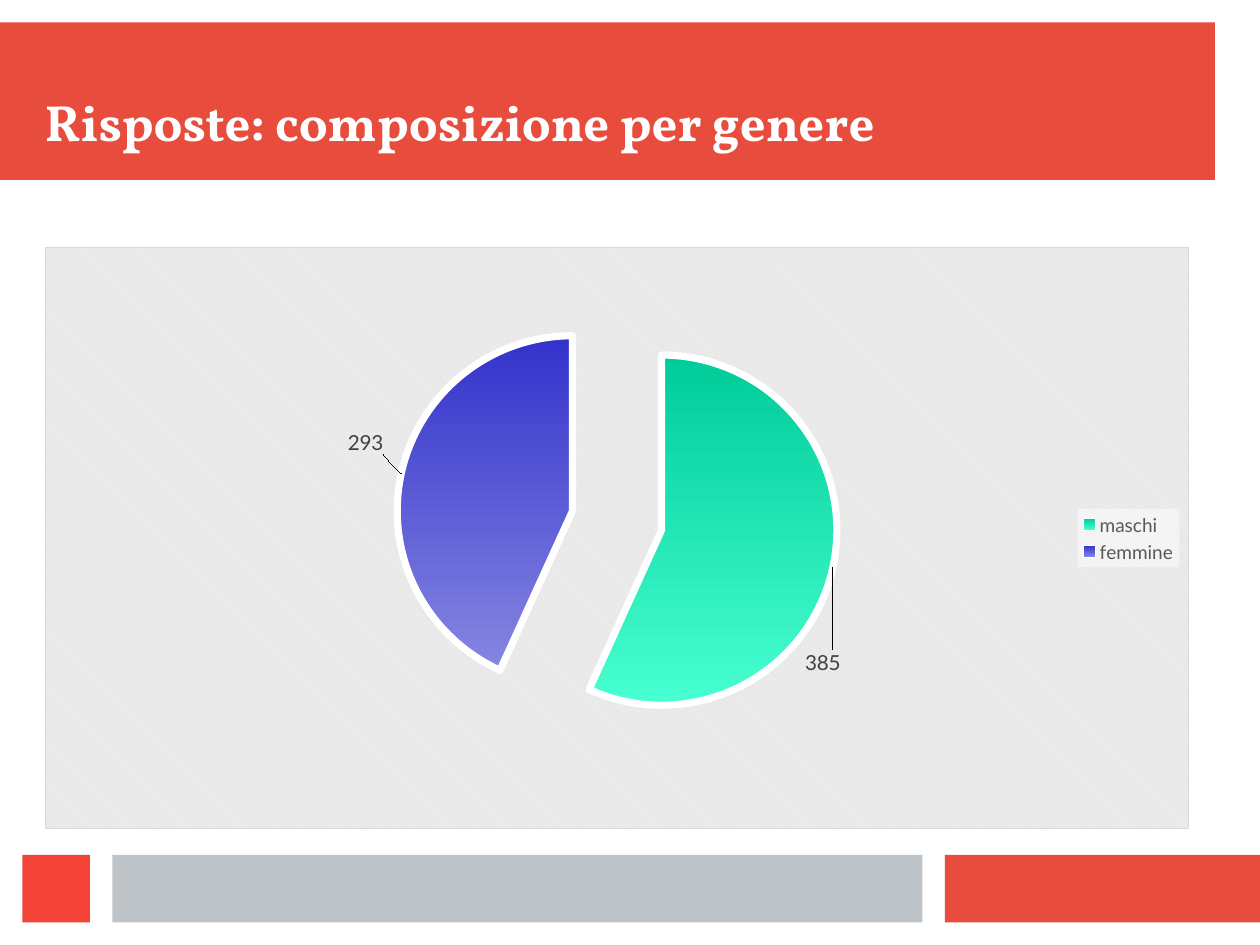
from pptx import Presentation
from pptx.chart.data import CategoryChartData
from pptx.dml.color import RGBColor
from pptx.enum.chart import XL_CHART_TYPE, XL_LABEL_POSITION, XL_LEGEND_POSITION
from pptx.enum.shapes import MSO_SHAPE
from pptx.enum.text import MSO_ANCHOR
from pptx.oxml import parse_xml
from pptx.oxml.ns import nsdecls, qn
from pptx.util import Cm, Pt

RED = RGBColor(0xE7, 0x4C, 0x3C)
BRIGHT_RED = RGBColor(0xF4, 0x43, 0x36)
SILVER = RGBColor(0xBD, 0xC3, 0xC7)
WHITE = RGBColor(0xFF, 0xFF, 0xFF)
LABEL_GREY = RGBColor(0x40, 0x40, 0x40)
LEGEND_GREY = RGBColor(0x59, 0x59, 0x59)
PATTERN_GREY = RGBColor(0xE6, 0xE6, 0xE6)
BORDER_GREY = RGBColor(0xD9, 0xD9, 0xD9)
GREENS = RGBColor(0x00, 0xCC, 0x99), RGBColor(0x47, 0xFF, 0xD1)
BLUES = RGBColor(0x33, 0x33, 0xCC), RGBColor(0x85, 0x85, 0xE0)


def chart_xml(tag, content="", attrs=""):
    """Return a chart element with the given content."""
    return parse_xml(f'<c:{tag} {nsdecls("c", "a")} {attrs}>{content}</c:{tag}>')


def layout(**values):
    """Return a manual layout element."""
    items = "".join(f'<c:{k} val="{v}"/>' for k, v in values.items())
    return chart_xml("layout", f"<c:manualLayout>{items}</c:manualLayout>")


def add_band(s, left, top, width, height, color):
    """Add a plain coloured rectangle."""
    sp = s.shapes.add_shape(MSO_SHAPE.RECTANGLE, Cm(left), Cm(top), Cm(width), Cm(height))
    sp.shadow.inherit = False
    sp.fill.solid()
    sp.fill.fore_color.rgb = color
    sp.line.fill.background()


def add_title(s, text):
    """Add the slide title, anchored at the bottom of its box."""
    tf = s.shapes.add_textbox(Cm(1), Cm(1), Cm(25.9), Cm(2.4)).text_frame
    tf.word_wrap = True
    tf.vertical_anchor = MSO_ANCHOR.BOTTOM
    tf.margin_left = tf.margin_right = tf.margin_top = tf.margin_bottom = 0
    p = tf.paragraphs[0]
    p.text = text
    p.line_spacing = 0.97
    p.font.name, p.font.size, p.font.bold = "Vollkorn", Pt(32), True
    p.font.color.rgb = WHITE


def style_slice(series, index, colors, offset):
    """Give a slice its gradient, white outline and shifted label."""
    point = series.points[index]
    fill = point.format.fill
    fill.gradient()
    fill.gradient_angle = 270
    for stop, position, color in zip(fill.gradient_stops, (0, 1), colors):
        stop.position = position
        stop.color.rgb = color
    point.format.line.color.rgb = WHITE
    point.format.line.width = Pt(4.5)
    label = point.data_label
    label.font.size = Pt(13)
    label.font.color.rgb = LABEL_GREY
    label.position = XL_LABEL_POSITION.OUTSIDE_END
    x, y = offset
    idx = series.data_labels._element.findall(qn("c:dLbl"))[index].find(qn("c:idx"))
    idx.addnext(layout(x=x, y=y))


def style_legend(chart):
    """Place the legend at the right on a translucent white ground."""
    chart.has_legend = True
    legend = chart.legend
    legend.position = XL_LEGEND_POSITION.RIGHT
    legend.include_in_layout = False
    legend.font.size = Pt(12)
    legend.font.color.rgb = LEGEND_GREY
    ground = ('<a:solidFill><a:srgbClr val="FFFFFF"><a:alpha val="50000"/>'
              '</a:srgbClr></a:solidFill>')
    legend._element.find(qn("c:overlay")).addnext(chart_xml("spPr", ground))


def add_pie(s):
    """Add the exploded pie of answers by gender."""
    data = CategoryChartData()
    data.categories = ["maschi", "femmine"]
    data.add_series("Series 1", (385, 293))
    chart = s.shapes.add_chart(XL_CHART_TYPE.PIE, Cm(1), Cm(5.49), Cm(25.43), Cm(12.93), data).chart
    chart.has_title = False
    chart.font.name, chart.font.size = "Lato", Pt(10)
    series = chart.plots[0].series[0]
    series._element.find(qn("c:tx")).addnext(chart_xml("explosion", attrs='val="26"'))
    style_slice(series, 0, GREENS, (-0.03, 0.14))
    style_slice(series, 1, BLUES, (-0.01, -0.03))
    style_legend(chart)
    root = chart.element.find(qn("c:chart"))
    area = root.find(qn("c:plotArea"))
    for old in area.findall(qn("c:layout")):
        area.remove(old)
    area.insert(0, layout(layoutTarget="inner", xMode="edge", yMode="edge",
                          x=0.08, y=0.09, w=0.84, h=0.76))
    root.addnext(chart_xml("spPr", (
        f'<a:pattFill prst="dkDnDiag"><a:fgClr><a:srgbClr val="{WHITE}"/></a:fgClr>'
        f'<a:bgClr><a:srgbClr val="{PATTERN_GREY}"/></a:bgClr></a:pattFill>'
        f'<a:ln w="9525"><a:solidFill><a:srgbClr val="{BORDER_GREY}"/></a:solidFill></a:ln>')))


def main():
    """Build and save the slide."""
    prs = Presentation()
    prs.slide_width, prs.slide_height = Cm(28), Cm(21)
    s = prs.slides.add_slide(prs.slide_layouts[6])
    add_band(s, 0, 0.5, 27, 3.5, RED)
    for left, width, color in ((21, 7, RED), (2.5, 18, SILVER), (0.5, 1.5, BRIGHT_RED)):
        add_band(s, left, 19, width, 1.5, color)
    add_title(s, "Risposte: composizione per genere")
    add_pie(s)
    prs.save("out.pptx")


if __name__ == "__main__":
    main()
